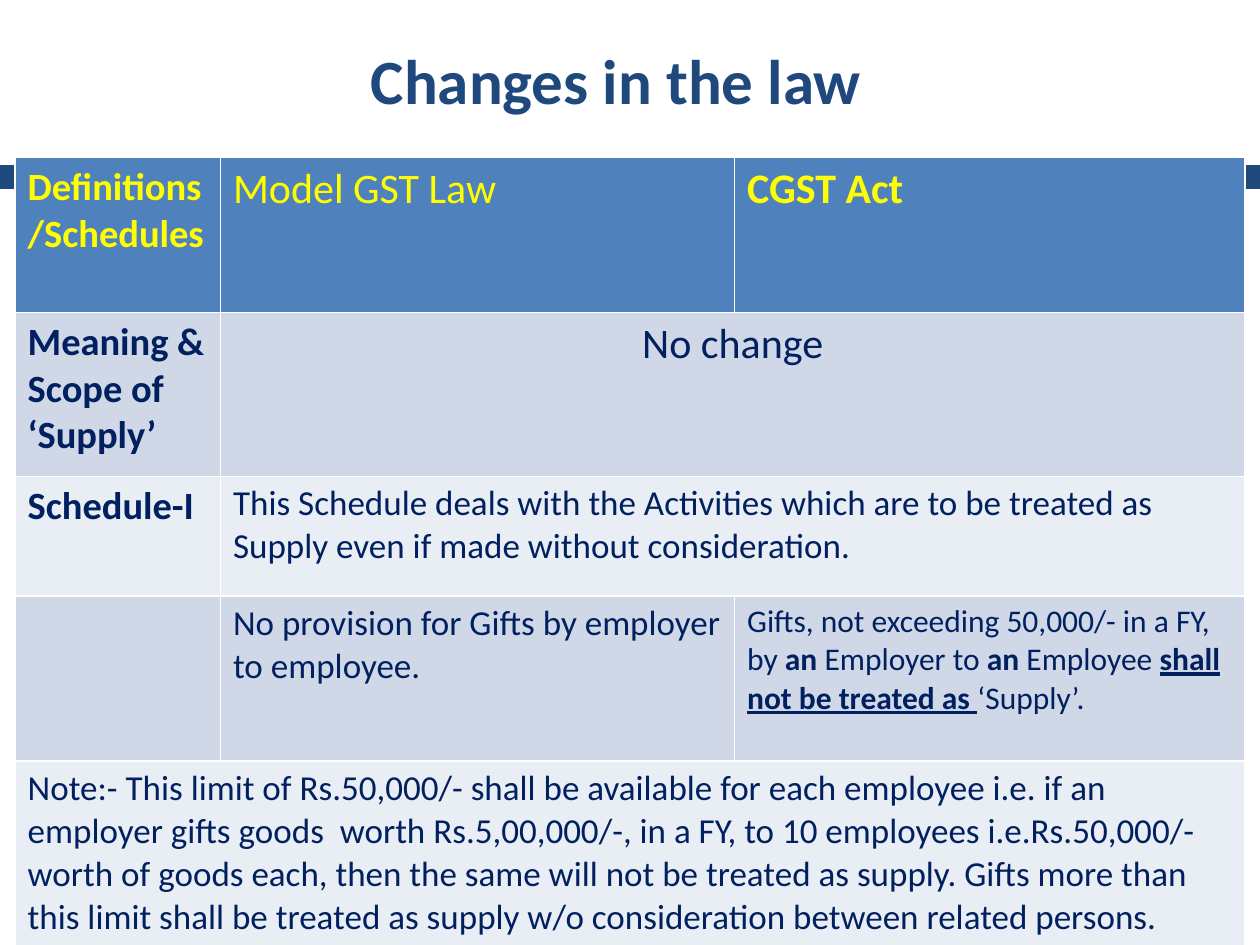
import pptx
import pptx.dml.color
import pptx.enum.shapes
import pptx.enum.text
import pptx.oxml
import pptx.oxml.ns
import pptx.util
from pptx.util import Inches

FONT = "Calibri"
WHITE, NAVY, BLUE, YELLOW = "FFFFFF", "1F497D", "4F81BD", "FFFF00"
INK, DARK_BAND, LIGHT_BAND = "002060", "D0D8E8", "E9EDF4"
LEFT = pptx.enum.text.PP_ALIGN.LEFT
CENTER = pptx.enum.text.PP_ALIGN.CENTER

TITLE = "Changes in the law"
COLUMNS = [1.63, 4.08, 4.05]
# Each row: height, fill, text colour, cells.
# Each cell: columns spanned, text size, alignment, runs of (text, style).
# Styles: "b" is bold, "u" is underlined.
ROWS = [
    (1.23, BLUE, YELLOW, [
        (1, 22, LEFT, [("Definitions/Schedules", "b")]),
        (1, 24, LEFT, [("Model GST Law", "")]),
        (1, 24, LEFT, [("CGST Act", "b")]),
    ]),
    (1.3, DARK_BAND, INK, [
        (1, 22, LEFT, [("Meaning & Scope of ‘Supply’", "b")]),
        (2, 24, CENTER, [("No change", "")]),
    ]),
    (0.95, LIGHT_BAND, INK, [
        (1, 22, LEFT, [("Schedule-I", "b")]),
        (2, 20, LEFT, [("This Schedule deals with the Activities which are to be "
                        "treated as Supply even if made without consideration.", "")]),
    ]),
    (1.31, DARK_BAND, INK, [
        (1, 20, LEFT, []),
        (1, 20, LEFT, [("No provision for Gifts by employer to employee.", "")]),
        (1, 18, LEFT, [
            ("Gifts, not exceeding 50,000/- in a FY, by ", ""),
            ("an", "b"),
            (" Employer to ", ""),
            ("an", "b"),
            (" Employee ", ""),
            ("shall not be treated as ", "bu"),
            ("‘Supply’.", ""),
        ]),
    ]),
    (1.57, LIGHT_BAND, INK, [
        (3, 20, LEFT, [("Note:- This limit of Rs.50,000/- shall be available for each "
                        "employee i.e. if an employer gifts goods  worth Rs.5,00,000/-, "
                        "in a FY, to 10 employees i.e.Rs.50,000/-worth of goods each, "
                        "then the same will not be treated as supply. Gifts more than "
                        "this limit shall be treated as supply w/o consideration "
                        "between related persons.", "")]),
    ]),
]


def rgb(color):
    return pptx.dml.color.RGBColor.from_string(color)


def set_fill(item, color):
    item.fill.solid()
    item.fill.fore_color.rgb = rgb(color)


def add_run(p, text, size, color, style=""):
    r = p.add_run()
    r.text = text
    r.font.name = FONT
    r.font.size = pptx.util.Pt(size)
    r.font.color.rgb = rgb(color)
    r.font.bold = "b" in style
    r.font.underline = "u" in style


def set_borders(cell, color, points):
    """Draw the same line on all four sides of a cell."""
    tcPr = cell._tc.get_or_add_tcPr()
    for i, side in enumerate(("lnL", "lnR", "lnT", "lnB")):
        tcPr.insert(i, pptx.oxml.parse_xml(
            f'<a:{side} {pptx.oxml.ns.nsdecls("a")} w="{pptx.util.Pt(points)}">'
            f'<a:solidFill><a:srgbClr val="{color}"/></a:solidFill></a:{side}>'))


def add_title(s):
    sp = s.shapes.title
    sp.left, sp.top, sp.width, sp.height = map(Inches, (0.83, 0.21, 7.92, 1.02))
    set_fill(sp, WHITE)
    tf = sp.text_frame
    tf.auto_size = pptx.enum.text.MSO_AUTO_SIZE.NONE
    tf.vertical_anchor = pptx.enum.text.MSO_ANCHOR.MIDDLE
    tf.margin_left = Inches(0.3)
    p = tf.paragraphs[0]
    p.alignment = CENTER
    p.line_spacing = pptx.util.Pt(30)
    add_run(p, TITLE, 36, NAVY, "b")


def add_band(s):
    sp = s.shapes.add_shape(pptx.enum.shapes.MSO_SHAPE.RECTANGLE,
                            0, Inches(1.31), Inches(10), Inches(0.19))
    sp.shadow.inherit = False
    set_fill(sp, NAVY)
    sp.line.fill.background()


def add_law_table(s):
    table = s.shapes.add_table(
        len(ROWS), len(COLUMNS), Inches(0.12), Inches(1.25),
        Inches(sum(COLUMNS)), Inches(sum(row[0] for row in ROWS))).table
    for column, width in zip(table.columns, COLUMNS):
        column.width = Inches(width)
    for i, (height, fill, color, cells) in enumerate(ROWS):
        table.rows[i].height = Inches(height)
        for j in range(len(COLUMNS)):
            set_fill(table.cell(i, j), fill)
            set_borders(table.cell(i, j), WHITE, 1)
        j = 0
        for span, size, align, runs in cells:
            cell = table.cell(i, j)
            if span > 1:
                cell.merge(table.cell(i, j + span - 1))
            p = cell.text_frame.paragraphs[0]
            p.alignment = align
            for text, style in runs:
                add_run(p, text, size, color, style)
            j += span


def main():
    prs = pptx.Presentation()
    prs.slide_width, prs.slide_height = Inches(10), Inches(7.5)
    s = prs.slides.add_slide(prs.slide_layouts[5])
    add_title(s)
    add_band(s)
    add_law_table(s)
    prs.save("out.pptx")


if __name__ == "__main__":
    main()
